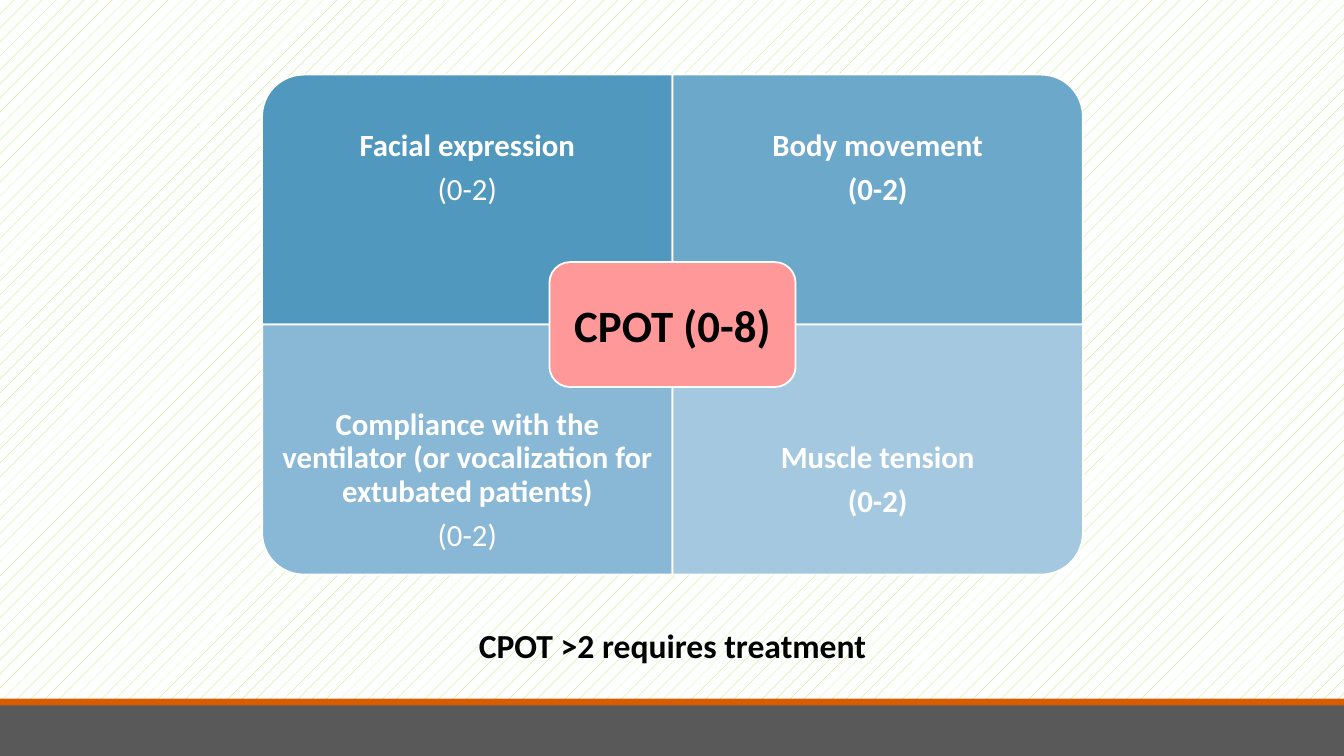
"""Build the CPOT pain score slide: four scored domains around a total."""
from pptx import Presentation
from pptx.dml.color import RGBColor
from pptx.enum.dml import MSO_PATTERN
from pptx.enum.shapes import MSO_SHAPE
from pptx.enum.text import MSO_ANCHOR, PP_ALIGN
from pptx.util import Inches, Pt

RECT = MSO_SHAPE.RECTANGLE
ONE_ROUND = MSO_SHAPE.ROUND_1_RECTANGLE
ROUNDED = MSO_SHAPE.ROUNDED_RECTANGLE
DOTS = MSO_PATTERN.PERCENT_5
CENTER = PP_ALIGN.CENTER
MIDDLE, TOP = MSO_ANCHOR.MIDDLE, MSO_ANCHOR.TOP

FONT = "Calibri"
COLORS = {
    "white": "FFFFFF", "black": "000000", "dots": "A7EA52",
    "footer": "595959", "accent": "D85C00", "total": "FF9999",
    "face": "5198BE", "body": "6CA8CA", "ventilator": "88B8D5", "muscle": "A5C8E1",
}
DOMAINS = [
    ("Facial expression", False, "face", 0, 0, 270),
    ("Body movement", True, "body", 1, 0, 0),
    ("Compliance with the ventilator (or vocalization for extubated patients)",
     False, "ventilator", 0, 1, 180),
    ("Muscle tension", True, "muscle", 1, 1, 90),
]


def color(name):
    return RGBColor.from_string(COLORS[name])


class ScoreSlide:
    """Slide with a two by two matrix grid and its shared style."""

    left, top, column, row = 2.6, 0.74, 4.07, 2.48

    def __init__(self, deck):
        self.deck = deck
        self.slide = deck.slides.add_slide(deck.slide_layouts[6])
        backdrop = self.slide.background.fill
        backdrop.patterned()
        backdrop.pattern = DOTS
        backdrop.fore_color.rgb = color("dots")
        backdrop.back_color.rgb = color("white")

    def cell(self, col, row, cols=1, rows=1):
        return [Inches(length) for length in (
            self.left + col * self.column, self.top + row * self.row,
            cols * self.column, rows * self.row)]

    def block(self, kind, place, fill, outlined=True):
        block = self.slide.shapes.add_shape(kind, *place)
        block.shadow.inherit = False
        block.fill.solid()
        block.fill.fore_color.rgb = color(fill)
        if outlined:
            block.line.color.rgb = color("white")
            block.line.width = Pt(1.25)
        else:
            block.line.fill.background()
        return block

    def band(self, top, height, fill):
        width, full = self.deck.slide_width, self.deck.slide_height
        self.block(RECT, (0, int(top * full), width, int(height * full)), fill, False)

    def quadrant(self, col, row, fill, turn):
        x, y, width, height = self.cell(col, row)
        if turn in (90, 270):
            shift = (width - height) // 2
            x, y, width, height = x + shift, y - shift, height, width
        self.block(ONE_ROUND, (x, y, width, height), fill).rotation = turn

    def set_text(self, frame, lines, size, ink, inset=None, anchor=MIDDLE, leading=1, gap=0):
        frame.word_wrap = True
        frame.vertical_anchor = anchor
        if inset is not None:
            frame.margin_left = frame.margin_right = Inches(inset)
            frame.margin_top = frame.margin_bottom = Inches(inset)
        for index, (words, bold) in enumerate(lines):
            line = frame.add_paragraph() if index else frame.paragraphs[0]
            line.text = words
            line.alignment = CENTER
            line.line_spacing = leading
            line.space_after = Pt(gap * size)
            line.font.name, line.font.size, line.font.bold = FONT, Pt(size), bold
            line.font.color.rgb = color(ink)

    def label(self, place, lines, size, ink, **style):
        self.set_text(self.slide.shapes.add_textbox(*place).text_frame, lines, size, ink, **style)


def main():
    deck = Presentation()
    deck.slide_width, deck.slide_height = Inches(13.33), Inches(7.5)
    page = ScoreSlide(deck)
    page.band(0.93, 0.07, "footer")
    page.band(0.924, 0.009, "accent")
    for domain, bold_score, fill, col, row, turn in DOMAINS:
        page.quadrant(col, row, fill, turn)
        page.label(page.cell(col, row * 1.25, rows=0.75),
                   [(domain, True), ("(0-2)", bold_score)], 22, "white",
                   inset=0.17, leading=0.9, gap=0.35)
    total = page.block(ROUNDED, page.cell(0.7, 0.75, 0.6, 0.5), "total")
    page.set_text(total.text_frame, [("CPOT (0-8)", True)], 32, "black", inset=0.13)
    page.label(page.cell(0.18, 2.18, 1.64, 0.2),
               [("CPOT >2 requires treatment", True)], 24, "black", anchor=TOP)
    deck.save("out.pptx")


if __name__ == "__main__":
    main()
